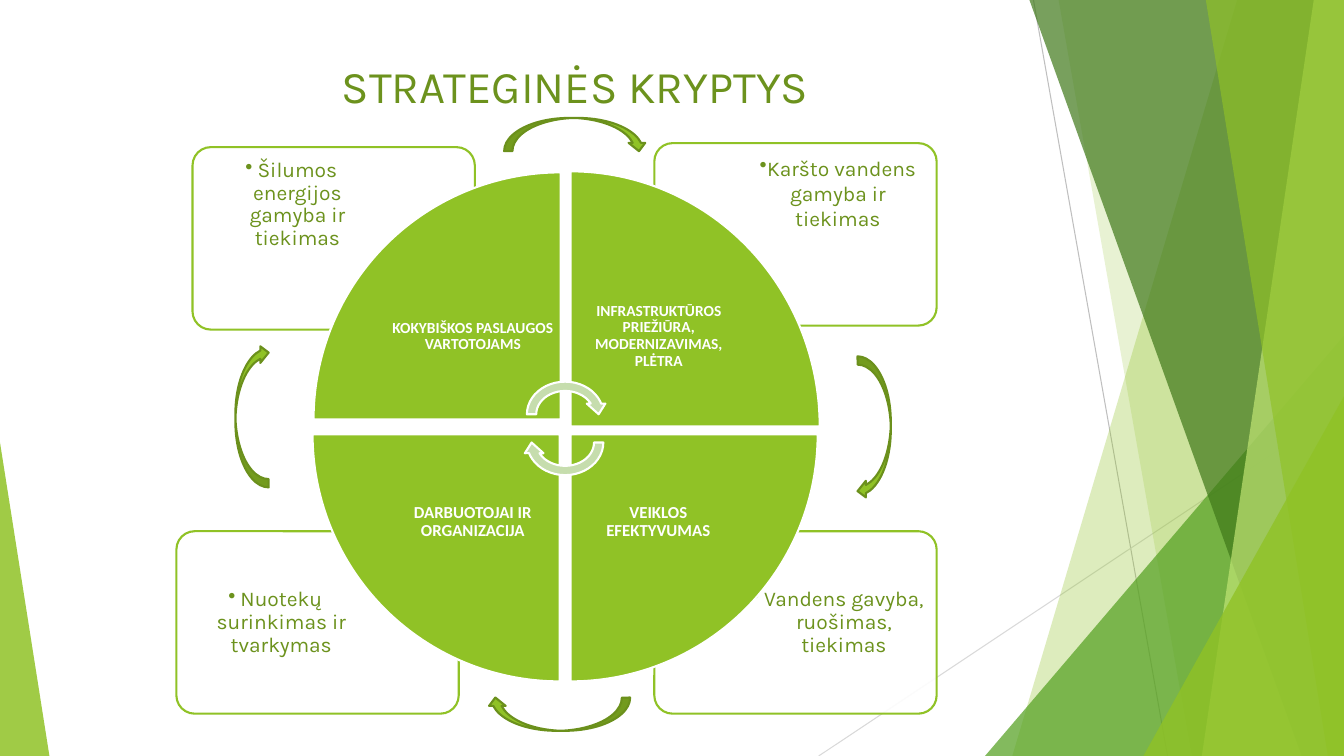
from lxml import etree
from pptx import Presentation
from pptx import util as u
from pptx.dml.color import RGBColor
from pptx.enum import shapes, text
from pptx.oxml import ns

# Grid: ten columns and ten rows to the inch
COLUMNS, ROWS = 133.3, 75
CELL = u.Inches(0.1)
GREEN, TEXT_GREEN, ARROW_EDGE = "90C226", "6C921D", "6B901C"
WHITE, PALE = "FFFFFF", "C6DDAD"
KIND = shapes.MSO_SHAPE
ANCHOR = text.MSO_ANCHOR


def grid(*lengths):
    return [round(length * CELL) for length in lengths]


def rgb(value):
    return RGBColor.from_string(value)


def apply(target, values):
    for name, value in values.items():
        setattr(target, name, value)


def add_xml(parent, tag, **attributes):
    return etree.SubElement(parent, ns.qn(tag), attributes)


def paint(shape, fill, opacity=100, edge=None):
    shape.shadow.inherit = False
    shape.fill.solid()
    shape.fill.fore_color.rgb = rgb(fill)
    if opacity < 100:
        color = shape.fill._xPr.find(".//" + ns.qn("a:srgbClr"))
        add_xml(color, "a:alpha", val=str(opacity * 1000))
    if edge:
        shape.line.color.rgb = rgb(edge)
        shape.line.width = u.Pt(1.5)
    else:
        shape.line.fill.background()


def add_shape(slide, kind, box, fill, opacity=100, edge=None, turn=0, adjust=None):
    shape = slide.shapes.add_shape(kind, *grid(*box))
    shape.rotation = turn
    if adjust is not None:
        shape.adjustments[0] = adjust
    paint(shape, fill, opacity, edge)


def add_facet(slide, top_left, top_right, bottom_right, bottom_left, fill, opacity):
    corners = [(top_left, 0), (top_right, 0), (bottom_right, ROWS), (bottom_left, ROWS)]
    points = [grid(*corner) for corner in corners]
    builder = slide.shapes.build_freeform(*points[0])
    builder.add_line_segments(points[1:], close=True)
    paint(builder.convert_to_shape(), fill, opacity)


def add_line(slide, ends, color):
    line = slide.shapes.add_connector(shapes.MSO_CONNECTOR.STRAIGHT, *grid(*ends))
    line.line.color.rgb = rgb(color)
    line.line.width = u.Pt(0.75)
    add_xml(line._element.spPr, "a:effectLst")


def add_text(slide, box, words, font, color, inset, anchor=ANCHOR.TOP, spacing=1.0):
    frame = slide.shapes.add_textbox(*grid(*box)).text_frame
    margins = {f"margin_{side}": u.Inches(inset) for side in ("left", "right", "top", "bottom")}
    apply(frame, {"word_wrap": True, "vertical_anchor": anchor, **margins})
    paragraph = frame.paragraphs[0]
    apply(paragraph, {"alignment": text.PP_ALIGN.CENTER, "line_spacing": spacing})
    run = paragraph.add_run()
    run.text = words
    apply(run.font, font)
    run.font.color.rgb = rgb(color)
    return paragraph


def add_service(slide, card, text_corner, words, indent=0.12, spacing=0.9):
    """Outlined card with one bulleted service."""
    add_shape(slide, KIND.ROUNDED_RECTANGLE, (*card, 28, 18.1), WHITE, 90, GREEN, adjust=0.1)
    font = {"size": u.Pt(15), "name": "Karla"}
    paragraph = add_text(slide, (*text_corner, 18.8, 12.8), words, font,
                         TEXT_GREEN, 0.08, spacing=spacing)
    properties = paragraph._p.get_or_add_pPr()
    properties.set("marL", str(u.Inches(indent)))
    properties.set("indent", str(-u.Inches(indent)))
    add_xml(properties, "a:buChar", char="•")


def add_direction(slide, wedge, turn, text_box, words, size, inset=0.09):
    """Quarter of the wheel with its strategic direction."""
    add_shape(slide, KIND.PIE_WEDGE, wedge, GREEN, edge=WHITE, turn=turn)
    font = {"size": u.Pt(size), "name": "Calibri", "bold": True}
    add_text(slide, text_box, words, font, WHITE, inset, ANCHOR.MIDDLE, 0.9)


def add_background(slide):
    add_line(slide, (102.5, 0, 115.8, ROWS), "BFBFBF")
    add_line(slide, (COLUMNS, 40.3, 81.2, ROWS), "D9D9D9")
    add_facet(slide, 122.7, COLUMNS, COLUMNS, 100.4, GREEN, 30)
    add_facet(slide, 105, COLUMNS, COLUMNS, 118.2, GREEN, 20)
    add_shape(slide, KIND.ISOSCELES_TRIANGLE, (97.7, 33.3, 35.6, 41.7), "54A021", 72, adjust=1)
    add_facet(slide, 102.1, COLUMNS, COLUMNS, 129.1, "3F7819", 70)
    add_facet(slide, 130.3, COLUMNS, COLUMNS, 119.2, "C0E474", 70)
    add_facet(slide, 119.6, COLUMNS, COLUMNS, 131.7, GREEN, 65)
    add_shape(slide, KIND.ISOSCELES_TRIANGLE, (113.4, 39.3, 19.9, 35.7), GREEN, 80, adjust=1)
    add_shape(slide, KIND.ISOSCELES_TRIANGLE, (0, 43.9, 4.9, 31.1), GREEN, 85, adjust=0)


def main():
    presentation = Presentation()
    apply(presentation, {"slide_width": grid(COLUMNS)[0], "slide_height": grid(ROWS)[0]})
    slide = presentation.slides.add_slide(presentation.slide_layouts[6])
    add_background(slide)

    # Title
    add_text(slide, (10, 5, 94, 6.7), "STRATEGINĖS KRYPTYS",
             {"size": u.Pt(32.4), "name": "Karla"}, TEXT_GREEN, 0.05, ANCHOR.BOTTOM)

    # Services in the corners
    add_service(slide, (64.9, 52.7), (73.7, 57.6), "Vandens gavyba, ruošimas, tiekimas")
    add_service(slide, (17.5, 52.7), (17.9, 57.6), "Nuotekų surinkimas ir tvarkymas")
    add_service(slide, (64.9, 14.2), (73.7, 14.6), "Karšto vandens gamyba ir tiekimas",
                indent=0, spacing=1.0)
    add_service(slide, (19.1, 14.6), (19.5, 15), "Šilumos energijos gamyba ir tiekimas")

    # Wheel of directions
    add_direction(slide, (31.1, 17.1, 24.5, 24.5), 0, (38.2, 24.7, 17.4, 17.4),
                  "KOKYBIŠKOS PASLAUGOS VARTOTOJAMS", 11, inset=0.04)
    add_direction(slide, (56.3, 17.3, 25.3, 24.7), 90, (56.6, 24.4, 17.5, 17.9),
                  "INFRASTRUKTŪROS PRIEŽIŪRA, MODERNIZAVIMAS, PLĖTRA", 11)
    add_direction(slide, (56.6, 43.1, 24.5, 24.5), 180, (56.6, 43.1, 17.4, 17.4),
                  "VEIKLOS EFEKTYVUMAS", 12)
    add_direction(slide, (31, 43.1, 24.5, 24.5), 270, (38.2, 43.1, 17.4, 17.4),
                  "DARBUOTOJAI IR ORGANIZACIJA", 12)

    # Arrows at the hub and around the wheel
    for top, turn in ((37.4, 0), (40.2, 180)):
        add_shape(slide, KIND.CIRCULAR_ARROW, (51.8, top, 8.5, 7.4), PALE, edge=WHITE, turn=turn)
    corners = [(50, 11.7), (79.6, 40.8), (48.3, 69.2), (17.9, 39.6)]
    for quarter, corner in enumerate(corners):
        add_shape(slide, KIND.CURVED_DOWN_ARROW, (*corner, 14.2, 3.3), GREEN,
                  edge=ARROW_EDGE, turn=90 * quarter)

    presentation.save("out.pptx")


if __name__ == "__main__":
    main()
